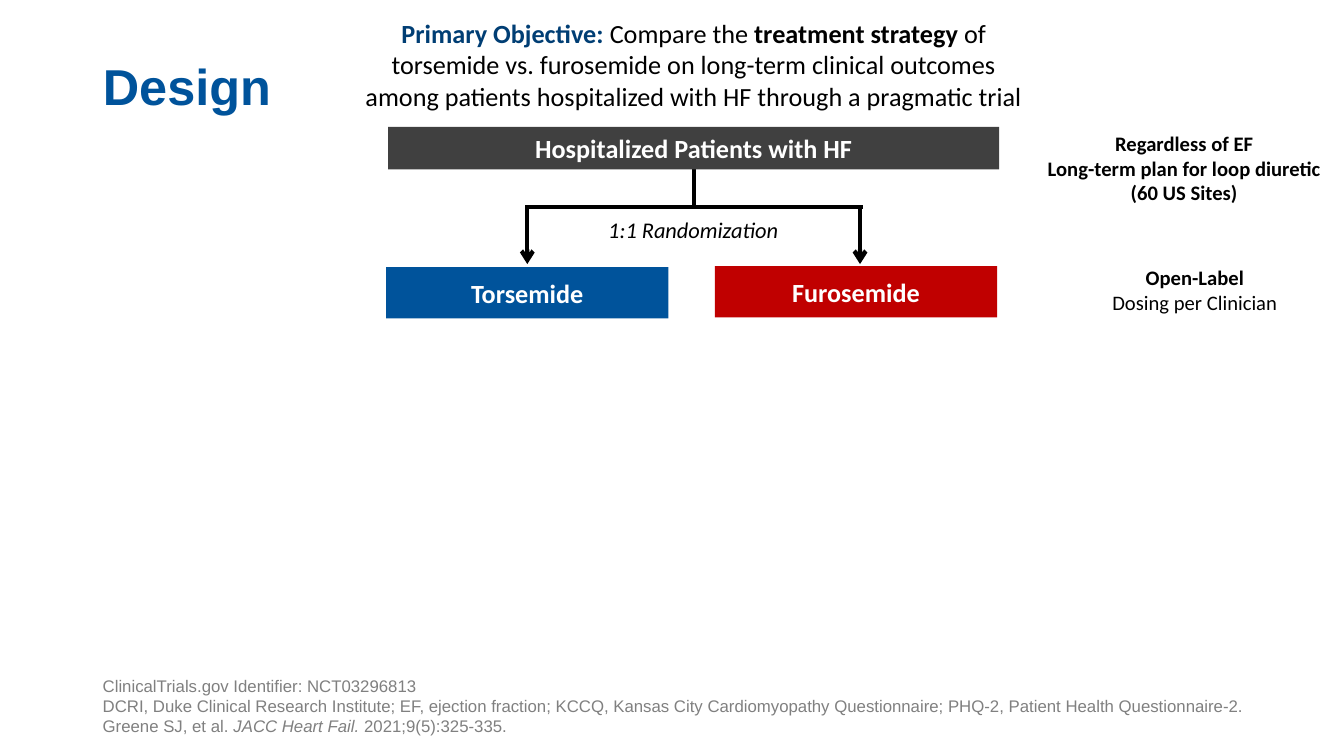
from lxml import etree
from pptx import Presentation
from pptx.dml.color import RGBColor
from pptx.enum.shapes import MSO_CONNECTOR, MSO_SHAPE
from pptx.enum.text import MSO_ANCHOR, PP_ALIGN
from pptx.oxml.ns import qn
from pptx.util import Pt

PX = 9144  # EMU per px, at 100 px to the inch
TITLE_ONLY = 5
LEFT, CENTER = PP_ALIGN.LEFT, PP_ALIGN.CENTER
TOP, MIDDLE, BOTTOM = MSO_ANCHOR.TOP, MSO_ANCHOR.MIDDLE, MSO_ANCHOR.BOTTOM
RECTANGLE, STRAIGHT = MSO_SHAPE.RECTANGLE, MSO_CONNECTOR.STRAIGHT
COLORS = {
    "blue": "00539B",
    "navy": "003E74",
    "red": "C00000",
    "charcoal": "404040",
    "gray": "808080",
    "black": "000000",
    "white": "FFFFFF",
}


def rgb(name):
    return RGBColor.from_string(COLORS[name])


def emu(*lengths):
    return [length * PX for length in lengths]


def write(frame, paragraphs, size, color="black", font="Calibri",
          align=CENTER, anchor=TOP):
    """Fill a frame; each paragraph is a list of (text, style) runs."""
    frame.word_wrap = True
    frame.vertical_anchor = anchor
    for index, runs in enumerate(paragraphs):
        paragraph = frame.add_paragraph() if index else frame.paragraphs[0]
        paragraph.alignment = align
        for text, style in runs:
            run = paragraph.add_run()
            run.text = text
            run.font.name = font
            run.font.size = Pt(size)
            run.font.bold = style.get("bold", False)
            run.font.italic = style.get("italic", False)
            run.font.color.rgb = rgb(style.get("color", color))


def add_text(slide, box, paragraphs, size, **options):
    write(slide.shapes.add_textbox(*emu(*box)).text_frame, paragraphs, size, **options)


def add_bar(slide, box, label, fill):
    bar = slide.shapes.add_shape(RECTANGLE, *emu(*box))
    bar.shadow.inherit = False
    bar.fill.solid()
    bar.fill.fore_color.rgb = rgb(fill)
    bar.line.fill.background()
    write(bar.text_frame, [[(label, {"bold": True})]], 18.7, "white", anchor=MIDDLE)


def add_line(slide, start, end, arrow=False):
    line = slide.shapes.add_connector(STRAIGHT, *emu(*start, *end))
    line.line.width = Pt(3)
    line.line.color.rgb = rgb("black")
    if arrow:
        etree.SubElement(line.line._get_or_add_ln(), qn("a:tailEnd"), type="arrow")
    etree.SubElement(line._element.spPr, qn("a:effectLst"))


def add_title(slide, box):
    title = slide.shapes.title
    title.left, title.top, title.width, title.height = emu(*box)
    write(title.text_frame, [[("Design", {"bold": True})]], 36, "blue", "Arial", LEFT, BOTTOM)
    title.text_frame.paragraphs[0].line_spacing = 0.9


def add_objective(slide, box):
    add_text(slide, box, [[
        ("Primary Objective: ", {"bold": True, "color": "navy"}),
        ("Compare the ", {}),
        ("treatment strategy", {"bold": True}),
        (" of torsemide vs. furosemide on long-term clinical outcomes among "
         "patients hospitalized with HF through a pragmatic trial", {}),
    ]], 18.7)


def add_trial_flow(slide, box):
    """Population bar branching into the two treatment arms."""
    left, top, width, height = box
    stem_x, fork_y = left + width // 2, top + 79
    arm_width, arm_height, branch = 280, 51, 165
    arm_top = top + height - arm_height

    add_line(slide, (stem_x, top + 34), (stem_x, fork_y))
    for x in (stem_x - branch, stem_x + branch):
        add_line(slide, (x, fork_y), (x, arm_top - 3), arrow=True)
    add_line(slide, (stem_x - branch - 2, fork_y), (stem_x + branch + 3, fork_y))

    add_bar(slide, (left - 2, arm_top, arm_width, arm_height), "Torsemide", "blue")
    add_bar(slide, (left + width - arm_width - 2, arm_top - 1, arm_width, arm_height),
            "Furosemide", "red")
    add_text(slide, (stem_x - 125, fork_y + 5, 249, 37),
             [[("1:1 Randomization", {"italic": True})]], 16)
    add_bar(slide, (left, top, width, 42), "Hospitalized Patients with HF", "charcoal")


def add_side_notes(slide, box):
    left, top, width, height = box
    bold = {"bold": True}
    add_text(slide, (left, top, width, 84), [
        [("Regardless of EF", bold)],
        [("Long-term plan for loop diuretic", bold)],
        [("(60 US Sites)", bold)],
    ], 14.7)
    add_text(slide, (left + 36, top + height - 59, 252, 59), [
        [("Open-Label", bold)],
        [("Dosing per Clinician", {})],
    ], 14.7)


def add_references(slide, box):
    add_text(slide, box, [
        [("ClinicalTrials.gov Identifier: NCT03296813", {})],
        [("DCRI, Duke Clinical Research Institute; EF, ejection fraction; "
          "KCCQ, Kansas City Cardiomyopathy Questionnaire; "
          "PHQ-2, Patient Health Questionnaire-2.", {})],
        [("Greene SJ, et al. ", {}),
         ("JACC Heart Fail. ", {"italic": True}),
         ("2021;9(5):325-335.", {})],
    ], 12, color="gray", font="Arial", align=LEFT, anchor=BOTTOM)


def main():
    deck = Presentation()
    deck.slide_width, deck.slide_height = emu(1333, 750)
    slide = deck.slides.add_slide(deck.slide_layouts[TITLE_ONLY])
    add_references(slide, (92, 695, 1212, 40))
    add_title(slide, (92, 0, 1150, 121))
    add_objective(slide, (346, 12, 684, 104))
    add_trial_flow(slide, (385, 126, 606, 190))
    add_side_notes(slide, (1023, 125, 303, 192))
    deck.save("out.pptx")


if __name__ == "__main__":
    main()
